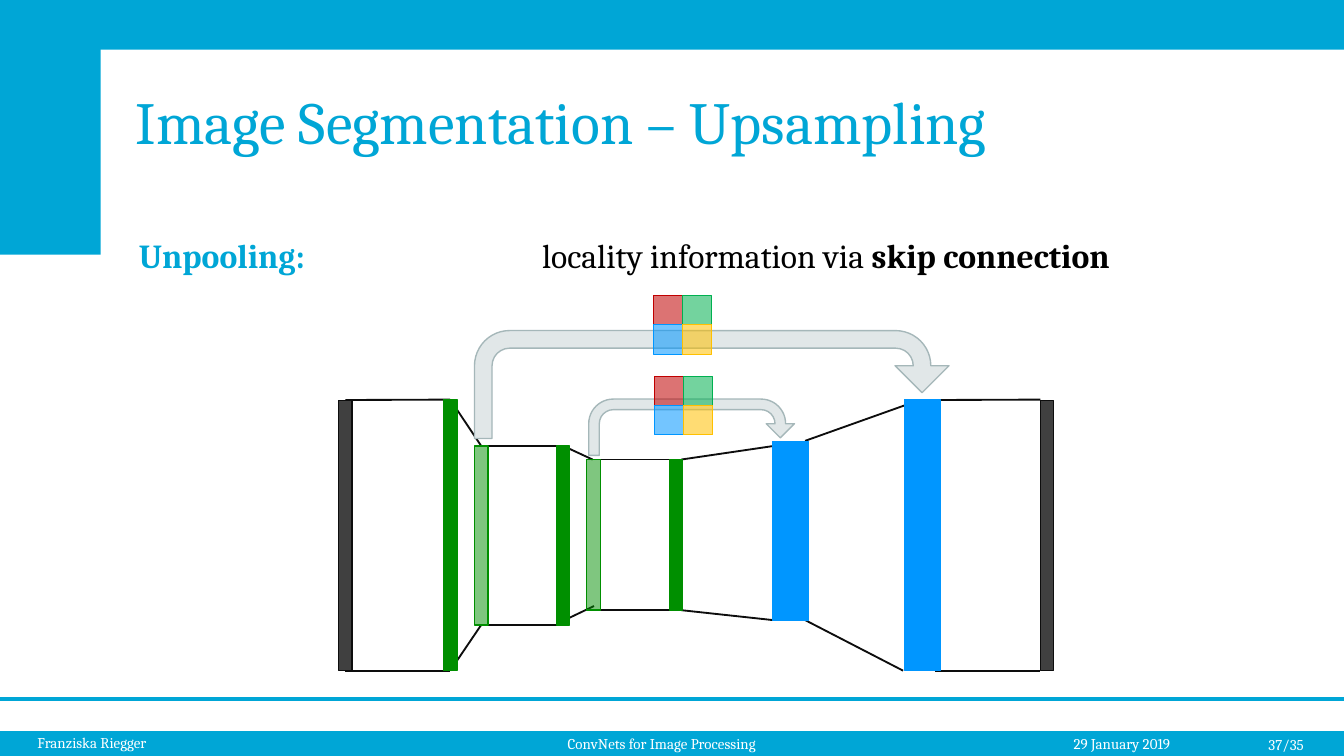
import pptx
import pptx.chart.data
import pptx.dml.color
import pptx.enum.shapes
import pptx.enum.text
import pptx.oxml
import pptx.oxml.ns
import pptx.util
from lxml import etree

Pt = pptx.util.Pt
SHAPE = pptx.enum.shapes.MSO_SHAPE
ALIGN = pptx.enum.text.PP_ALIGN
ANCHOR = pptx.enum.text.MSO_ANCHOR
qn = pptx.oxml.ns.qn

CYAN, WHITE, BLACK = "00A6D6", "FFFFFF", "000000"
GREEN, BLUE, INK = "008F00", "0096FF", "0D0D0D"
FONT = "Cambria"

# Layers: left, top, width, height, fill, line, opacity in percent
IMAGES = [(left, 214.5, 7.2, 144.7, "404040", INK, 100) for left in (181.4, 557.3)]
LAYERS = [
    (358.6, 246.2, 7.2, 80.6, GREEN, GREEN, 100),
    (254.2, 238.9, 7.2, 95.9, GREEN, GREEN, 50),
    (237.6, 214.1, 7.2, 145.2, GREEN, GREEN, 100),
    (413.9, 236.5, 19.2, 95.9, BLUE, BLUE, 100),
    (484.6, 214.1, 19.2, 145.2, BLUE, BLUE, 100),
    (298.1, 238.9, 7.2, 95.9, GREEN, GREEN, 100),
    (314.4, 246.2, 7.2, 80.6, GREEN, GREEN, 50),
]
OUTLINES = [
    [(185, 214.3), (241.2, 214.1), (257.8, 238.9), (301.7, 238.9),
     (317.5, 246.2), (362.2, 246.2)],
    [(185, 359.3), (241.2, 359.3), (257.8, 334.8), (301.7, 334.8)],
    [(301.7, 332.6), (318.2, 324.7)],
    [(317.5, 326.9), (362.2, 326.9)],
    [(365, 246.2), (414, 239)],
    [(365, 326.9), (414, 332.2)],
    [(431.3, 236.2), (486, 216.7)],
    [(431.3, 332.2), (483.8, 359.3)],
    [(501.1, 214.3), (557.3, 214.1)],
    [(501.1, 359.3), (557.3, 359.3)],
]
SKIP_ARROWS = [
    ((254.2, 177.1, 254.2, 57.8), (0.163, 0.25, 0.25, 0.438, 0.576)),
    ((315.4, 213.8, 110.2, 30.2), (0.188, 0.25, 0.25, 0.438, 0.688)),
]
POOL_COLOURS = ["C00000", "00B050", BLUE, "FFC000"]
POOL_CELL = 15.7


def rgb(colour):
    return pptx.dml.color.RGBColor.from_string(colour)


def add_block(slide, box, fill, line=None, weight=0.75, opacity=100, kind=SHAPE.RECTANGLE):
    block = slide.shapes.add_shape(kind, *map(Pt, box))
    block.shadow.inherit = False
    block.fill.solid()
    block.fill.fore_color.rgb = rgb(fill)
    if opacity < 100:
        colour = block.fill._xPr.find(qn("a:solidFill"))[0]
        etree.SubElement(colour, qn("a:alpha"), val=str(opacity * 1000))
    if line:
        block.line.color.rgb = rgb(line)
        block.line.width = Pt(weight)
    else:
        block.line.fill.background()
    return block


def add_line(slide, start, end, colour, weight):
    line = slide.shapes.add_connector(
        pptx.enum.shapes.MSO_CONNECTOR.STRAIGHT, *map(Pt, start + end))
    line.line.color.rgb = rgb(colour)
    line.line.width = Pt(weight)
    etree.SubElement(line._element.spPr, qn("a:effectLst"))


def add_text(slide, box, runs, size, align=ALIGN.LEFT, anchor=ANCHOR.TOP, inset=None, tab=None):
    """Write one paragraph of (text, colour, bold) runs."""
    frame = slide.shapes.add_textbox(*map(Pt, box)).text_frame
    frame.word_wrap = True
    frame.vertical_anchor = anchor
    if inset is not None:
        for side in ("left", "top", "right", "bottom"):
            setattr(frame, f"margin_{side}", Pt(inset))
    paragraph = frame.paragraphs[0]
    paragraph.alignment = align
    if tab:
        stops = etree.SubElement(paragraph._p.get_or_add_pPr(), qn("a:tabLst"))
        etree.SubElement(stops, qn("a:tab"), pos=str(Pt(tab)), algn="l")
    for text, colour, bold in runs:
        run = paragraph.add_run()
        run.text = text
        for name, value in {"name": FONT, "size": Pt(size), "bold": bold}.items():
            setattr(run.font, name, value)
        run.font.color.rgb = rgb(colour)


def add_frame(slide):
    """Draw the coloured bands and the footer."""
    add_block(slide, (0, 391.7, 720, 13.3), CYAN)
    add_line(slide, (0, 374.4), (720, 374.4), CYAN, 2)
    footer = [
        ("Franziska Riegger", (13, 389.5, 131.8, 17.3), ALIGN.LEFT, ANCHOR.TOP),
        ("ConvNets for Image Processing", (297, 390.2, 124.6, 17.3), ALIGN.LEFT, ANCHOR.TOP),
        ("29 January 2019", (568.1, 390.2, 87.1, 17.3), ALIGN.LEFT, ANCHOR.TOP),
        ("37/35", (523.4, 388.1, 182.2, 21.6), ALIGN.RIGHT, ANCHOR.MIDDLE),
    ]
    for text, box, align, anchor in footer:
        add_text(slide, box, [(text, WHITE, False)], 8, align, anchor)
    add_block(slide, (0, 0, 720, 26.6), CYAN)
    add_block(slide, (0, 0, 54, 136.4), CYAN)


def add_network(slide):
    for *box, fill, line, opacity in IMAGES:
        add_block(slide, box, fill, line, opacity=opacity)
    for outline in OUTLINES:
        for start, end in zip(outline, outline[1:]):
            add_line(slide, start, end, INK, 1)
    for *box, fill, line, opacity in LAYERS:
        add_block(slide, box, fill, line, opacity=opacity)


def add_skip_arrow(slide, box, adjustments):
    arrow = add_block(slide, box, "E1E7E8", "A5B7B9", kind=SHAPE.U_TURN_ARROW)
    for index, value in enumerate(adjustments):
        arrow.adjustments[index] = value


def add_pool_grid(slide, left, top):
    for index, colour in enumerate(POOL_COLOURS):
        row, column = divmod(index, 2)
        box = (left + column * POOL_CELL, top + row * POOL_CELL, POOL_CELL, POOL_CELL)
        add_block(slide, box, colour, colour, 0.5, 55)


def main():
    deck = pptx.Presentation()
    deck.slide_width, deck.slide_height = Pt(720), Pt(405)
    slide = deck.slides.add_slide(deck.slide_layouts[6])
    add_frame(slide)
    add_text(slide, (65.5, 31, 632.9, 67.7),
             [("Image Segmentation – Upsampling", CYAN, False)], 32, anchor=ANCHOR.MIDDLE)
    add_network(slide)
    for box, adjustments in SKIP_ARROWS:
        add_skip_arrow(slide, box, adjustments)
    add_text(slide, (74.4, 126, 533.5, 21.6),
             [("Unpooling:\t", CYAN, True),
              ("locality information via ", BLACK, False),
              ("skip connection", BLACK, True)], 18, inset=0, tab=216)
    add_pool_grid(slide, 350.6, 201.6)
    add_pool_grid(slide, 350, 158.4)
    deck.save("out.pptx")


if __name__ == "__main__":
    main()
